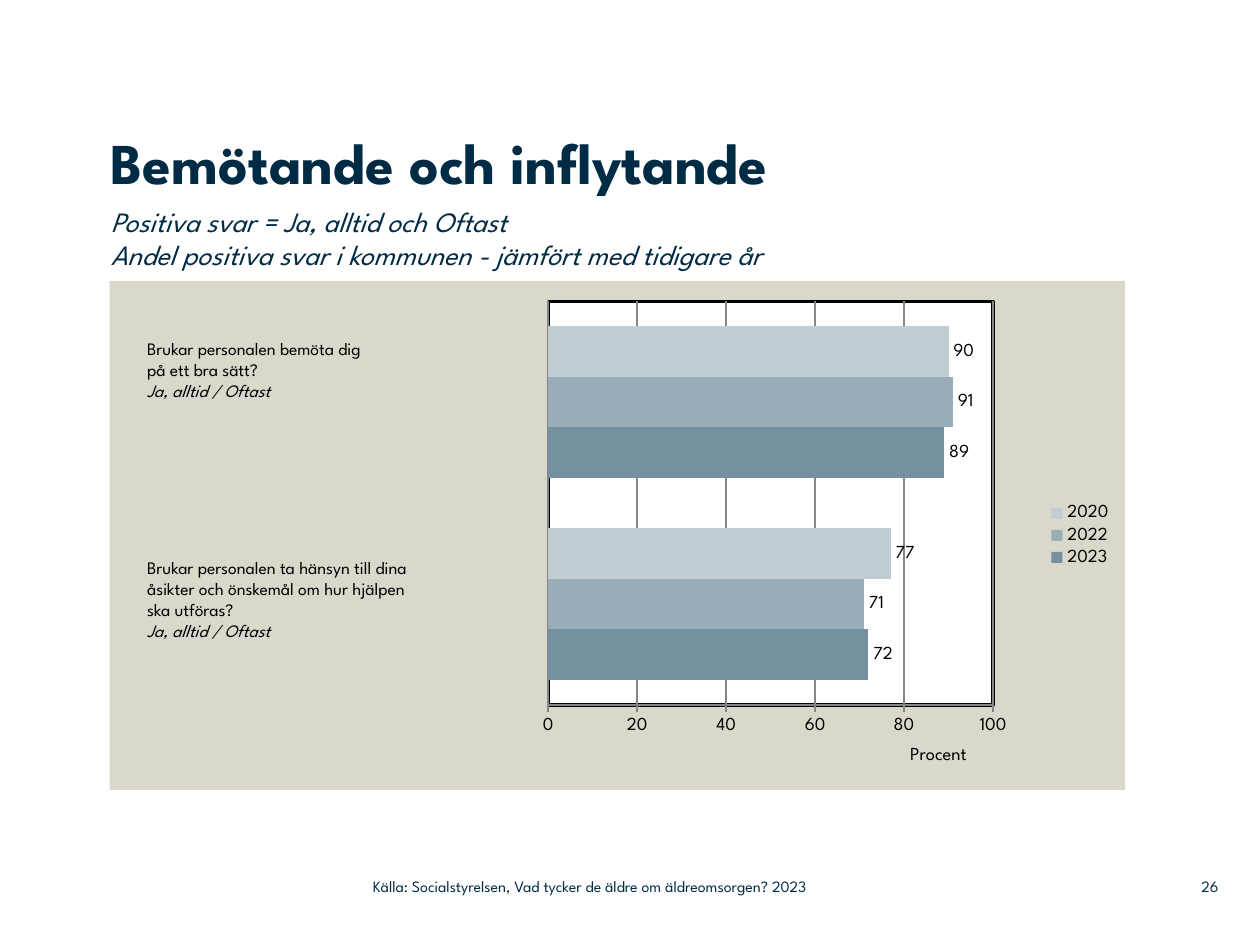
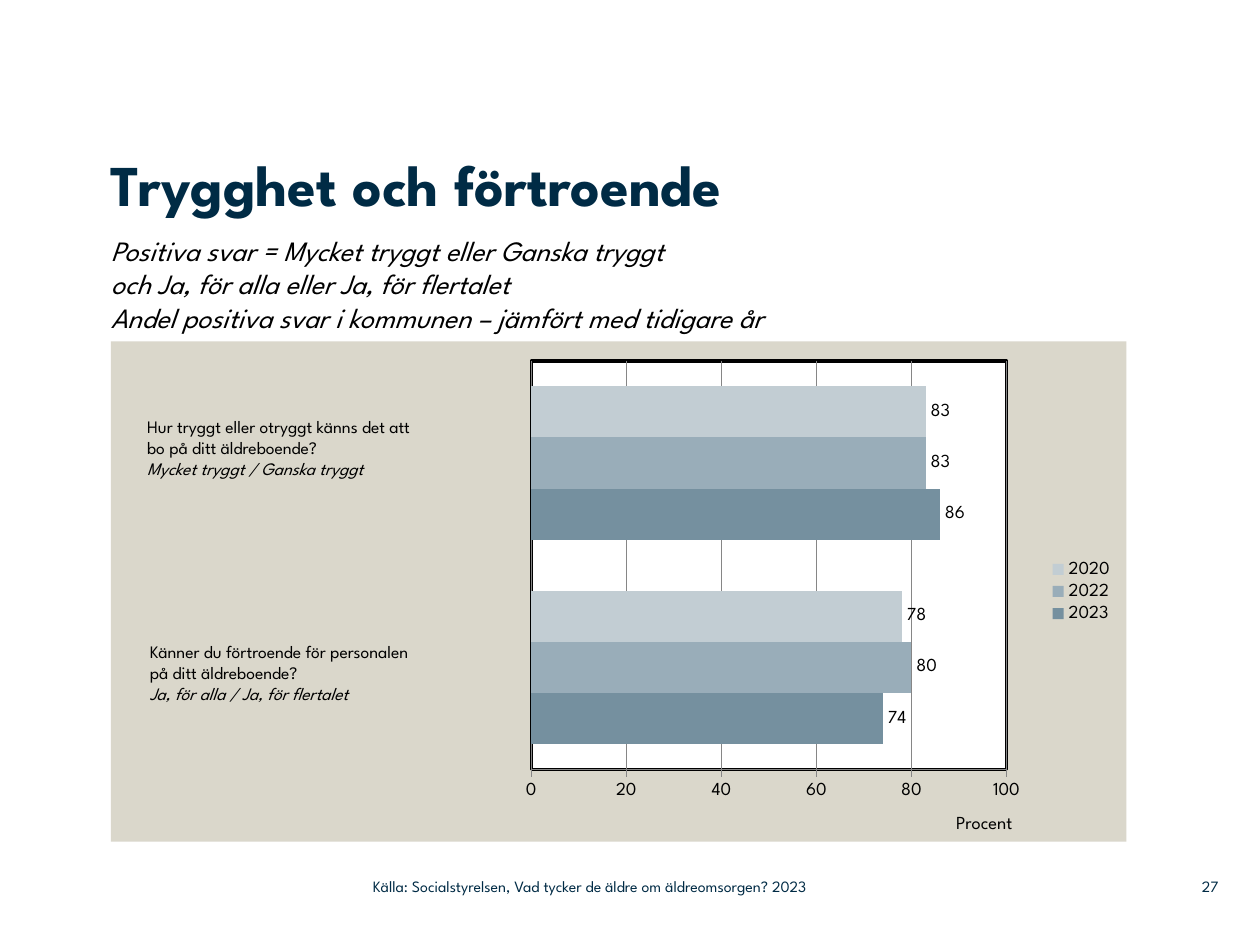
from lxml.etree import SubElement
from pptx import Presentation
from pptx.chart.data import CategoryChartData
from pptx.dml.color import RGBColor
from pptx.enum.chart import XL_CHART_TYPE, XL_LABEL_POSITION, XL_LEGEND_POSITION, XL_TICK_MARK
from pptx.enum.text import MSO_ANCHOR, PP_ALIGN
from pptx.oxml import parse_xml
from pptx.oxml.ns import nsdecls, qn
from pptx.util import Inches, Pt

FONT = "League Spartan"
NAVY = RGBColor(0x00, 0x2B, 0x45)
BLACK = RGBColor(0x00, 0x00, 0x00)
GRID_GREY = RGBColor(0x86, 0x86, 0x86)
PANEL_BEIGE = RGBColor(0xDA, 0xD7, 0xCB)
PLOT_WHITE = RGBColor(0xFF, 0xFF, 0xFF)
YEAR_COLOURS = {
    "2023": RGBColor(0x75, 0x90, 0x9F),
    "2022": RGBColor(0x99, 0xAD, 0xB9),
    "2020": RGBColor(0xC2, 0xCD, 0xD3),
}
SOURCE_NOTE = "Källa: Socialstyrelsen, Vad tycker de äldre om äldreomsorgen? 2023"

deck = Presentation()
deck.slide_width, deck.slide_height = Inches(10), Inches(7.5)
COLUMN = deck.slide_width // 100
ROW = deck.slide_height // 75
MARGIN = 8.8

# Places are (left, top, width, height) in columns and rows;
# layouts and plots are in percent of the chart.
slides = [
    {
        "number": "26",
        "title": "Bemötande och inflytande",
        "title_place": (MARGIN, 10.1, 83.6, 6.1),
        "subtitle": "Positiva svar = Ja, alltid och Oftast\n"
                    "Andel positiva svar i kommunen - jämfört med tidigare år",
        "subtitle_place": (MARGIN, 16.2, 65.2, 6.1),
        "subtitle_colour": NAVY,
        "chart_place": (8.7, 22.3, 80.6, 40.4),
        "plot": (43.2, 4, 43.8, 79.3),
        "axis_title": (78.5, 90.6),
        "grid_width": 1,
        "values": {"2023": (72, 89), "2022": (71, 91), "2020": (77, 90)},
        "questions": [
            ((10.7, 26.3, 32.4, 6.1),
             "Brukar personalen bemöta dig\npå ett bra sätt?", "Ja, alltid / Oftast"),
            ((10.7, 43.7, 32.3, 7.7),
             "Brukar personalen ta hänsyn till dina\nåsikter och önskemål om hur hjälpen\n"
             "ska utföras?", "Ja, alltid / Oftast"),
        ],
    },
    {
        "number": "27",
        "title": "Trygghet och förtroende",
        "title_place": (MARGIN, 11.8, 83.6, 6.8),
        "subtitle": "Positiva svar = Mycket tryggt eller Ganska tryggt\n"
                    "och Ja, för alla eller Ja, för flertalet\n"
                    "Andel positiva svar i kommunen – jämfört med tidigare år",
        "subtitle_place": (MARGIN, 18.5, 80.6, 8.6),
        "subtitle_colour": BLACK,
        "chart_place": (MARGIN, 27.1, 80.6, 39.7),
        "plot": (41.4, 3.9, 46.8, 81.7),
        "axis_title": (82.9, 93.9),
        "grid_width": 0.5,
        "values": {"2023": (74, 86), "2022": (80, 83), "2020": (78, 83)},
        "questions": [
            ((10.7, 32.5, 31.7, 6.1),
             "Hur tryggt eller otryggt känns det att\nbo på ditt äldreboende?",
             "Mycket tryggt / Ganska tryggt"),
            ((10.9, 50.4, 31.5, 6.1),
             "Känner du förtroende för personalen\npå ditt äldreboende?",
             "Ja, för alla / Ja, för flertalet"),
        ],
    },
]


def add_text(page, place, lines, size, colour, bold=False, italics=(False,),
             inset=0, anchor=MSO_ANCHOR.TOP, align=PP_ALIGN.LEFT):
    left, top, width, height = place
    box = page.shapes.add_textbox(int(left * COLUMN), int(top * ROW),
                                  int(width * COLUMN), int(height * ROW))
    frame = box.text_frame
    frame.word_wrap = True
    frame.vertical_anchor = anchor
    frame.margin_left = frame.margin_right = Inches(inset)
    frame.margin_top = frame.margin_bottom = Inches(inset / 2)
    for index, (line, italic) in enumerate(zip(lines, italics)):
        para = frame.add_paragraph() if index else frame.paragraphs[0]
        para.text = line
        para.alignment = align
        font = para.font
        font.name, font.size, font.bold, font.italic = FONT, Pt(size), bold, italic
        font.color.rgb = colour


def set_layout(parent, index, sides, inner=False):
    for old in parent.findall(qn("c:layout")):
        parent.remove(old)
    layout = parse_xml(f"<c:layout {nsdecls('c')}><c:manualLayout/></c:layout>")
    parent.insert(index, layout)
    if inner:
        SubElement(layout[0], qn("c:layoutTarget")).set("val", "inner")
    for side in "xy":
        SubElement(layout[0], qn(f"c:{side}Mode")).set("val", "edge")
    for side, percent in zip("xywh", sides):
        SubElement(layout[0], qn(f"c:{side}")).set("val", str(round(percent / 100, 3)))


for content in slides:
    page = deck.slides.add_slide(deck.slide_layouts[6])

    # Heading
    add_text(page, content["title_place"], [content["title"]], 33, NAVY, bold=True)
    add_text(page, content["subtitle_place"], [content["subtitle"]], 16,
             content["subtitle_colour"], italics=(True,))

    # Bar chart
    data = CategoryChartData(number_format="0")
    data.categories = ["1", "2"]
    for year, values in content["values"].items():
        data.add_series(year, values)
    left, top, width, height = content["chart_place"]
    chart = page.shapes.add_chart(
        XL_CHART_TYPE.BAR_CLUSTERED, int(left * COLUMN), int(top * ROW),
        int(width * COLUMN), int(height * ROW), data).chart
    chart.has_title = False
    chart.font.name, chart.font.size = FONT, Pt(10.5)
    chart.font.color.rgb = BLACK
    chart.has_legend = True
    chart.legend.position = XL_LEGEND_POSITION.RIGHT
    chart.legend.include_in_layout = False

    # Bars and their values
    bars = chart.plots[0]
    bars.gap_width, bars.overlap = 100, 0
    bars.vary_by_categories = False
    for series in bars.series:
        series.format.fill.solid()
        series.format.fill.fore_color.rgb = YEAR_COLOURS[series.name]
        labels = series.data_labels
        labels.show_value = True
        labels.position = XL_LABEL_POSITION.OUTSIDE_END
        labels.font.name, labels.font.size = FONT, Pt(10.5)
        labels.font.color.rgb = BLACK

    # Axes
    chart.category_axis.visible = False
    axis = chart.value_axis
    axis.minimum_scale, axis.maximum_scale, axis.major_unit = 0, 100, 20
    axis.major_tick_mark, axis.minor_tick_mark = XL_TICK_MARK.OUTSIDE, XL_TICK_MARK.NONE
    axis.has_major_gridlines = True
    for line in (axis.format.line, axis.major_gridlines.format.line):
        line.color.rgb = GRID_GREY
        line.width = Pt(content["grid_width"])
    para = axis.axis_title.text_frame.paragraphs[0]
    para.text = "Procent"
    para.font.name, para.font.size, para.font.bold = FONT, Pt(10.5), False
    para.font.color.rgb = BLACK
    set_layout(axis.axis_title.element, 1, content["axis_title"])

    # Chart panel and framed plot
    chart_part = chart.element.find(qn("c:chart"))
    plot_area = chart_part.find(qn("c:plotArea"))
    set_layout(plot_area, 0, content["plot"], inner=True)
    plot_area.append(parse_xml(
        f'<c:spPr {nsdecls("c", "a")}><a:solidFill><a:srgbClr val="{PLOT_WHITE}"/></a:solidFill>'
        f'<a:ln w="{Pt(2)}"><a:solidFill><a:srgbClr val="{BLACK}"/></a:solidFill></a:ln></c:spPr>'))
    chart_part.addnext(parse_xml(
        f'<c:spPr {nsdecls("c", "a")}><a:solidFill><a:srgbClr val="{PANEL_BEIGE}"/></a:solidFill>'
        '<a:ln><a:noFill/></a:ln></c:spPr>'))

    # Questions beside the bars
    for place, question, answers in content["questions"]:
        add_text(page, place, [question, answers], 10, BLACK, italics=(False, True), inset=0.1)

    # Footer
    add_text(page, (29.6, 68.9, 44.3, 2.9), [SOURCE_NOTE], 9, NAVY, anchor=MSO_ANCHOR.MIDDLE)
    add_text(page, (92, 68.9, 4.7, 2.9), [content["number"]], 9, NAVY,
             anchor=MSO_ANCHOR.MIDDLE, align=PP_ALIGN.RIGHT)

deck.save("out.pptx")
